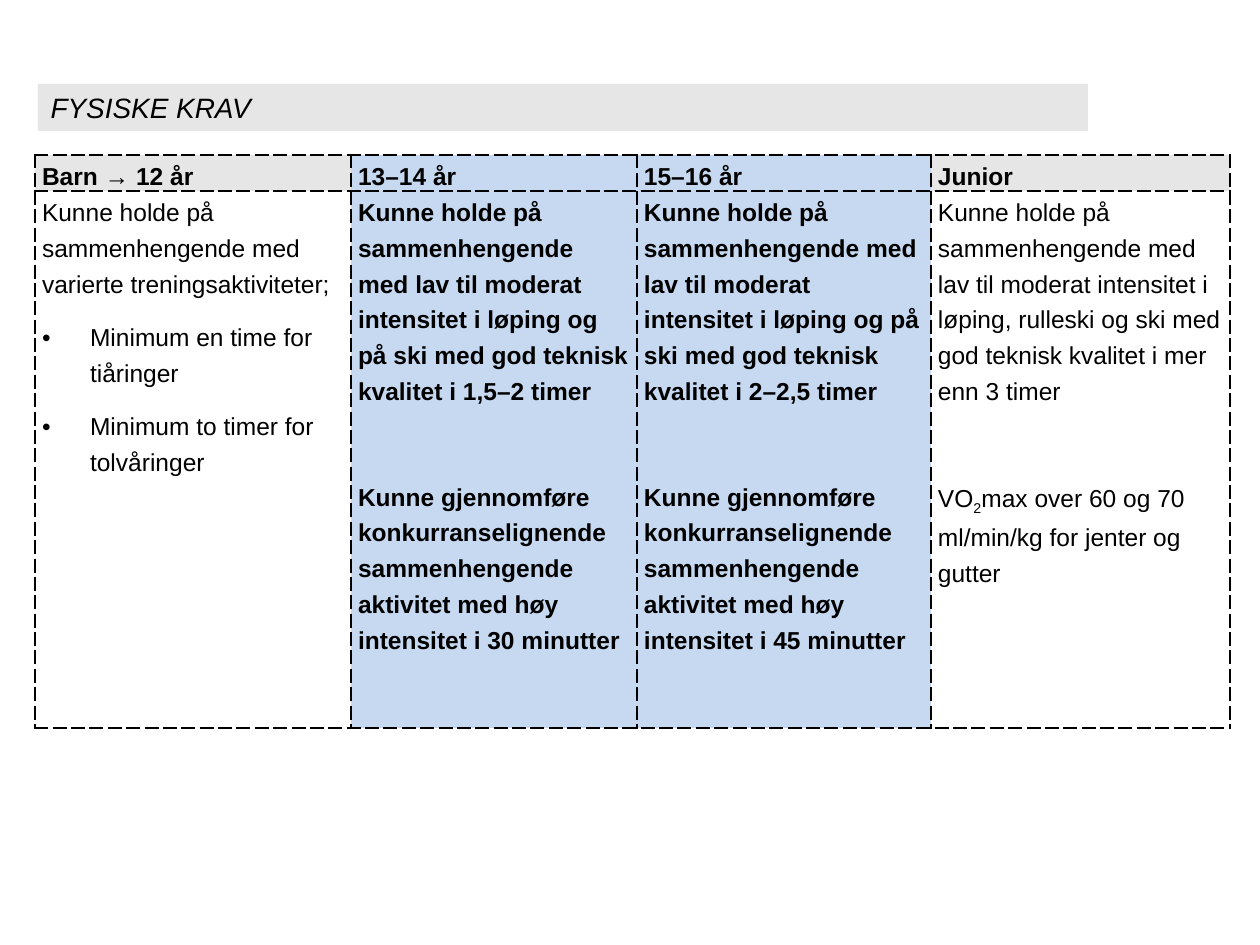
from lxml import etree
from pptx import Presentation
from pptx.dml.color import RGBColor
from pptx.enum.text import MSO_ANCHOR, MSO_AUTO_SIZE, PP_ALIGN
from pptx.oxml.ns import qn
from pptx.util import Pt

LEFT, JUST = PP_ALIGN.LEFT, PP_ALIGN.JUSTIFY
MIDDLE, FIXED = MSO_ANCHOR.MIDDLE, MSO_AUTO_SIZE.NONE
SCALE = 914400 / 126  # EMU per px
FONT = "Arial"
COLORS = {"text": "000000", "grey": "E6E6E6", "blue": "C6D9F1", "line": "000000"}

COLS = [316, 286, 294, 299]
ROWS = [36, 537]
PAD, INDENT = 7, 48
GAP, WIDE = 10, 40  # points before a paragraph

SKI = ("Kunne holde på sammenhengende med lav til moderat intensitet i løping "
       "og på ski med god teknisk kvalitet i {} timer")
RACE = ("Kunne gjennomføre konkurranselignende sammenhengende aktivitet "
        "med høy intensitet i {} minutter")


def px(n):
    return round(n * SCALE)


def rgb(name):
    return RGBColor.from_string(COLORS[name])


def add_run(para, text, size, bold=False, italic=False, base=0):
    run = para.add_run()
    run.text = text
    font = run.font
    font.name, font.size = FONT, Pt(size)
    font.bold, font.italic = bold, italic
    font.color.rgb = rgb("text")
    if base:
        run._r.get_or_add_rPr().set("baseline", str(base * 1000))


def add_bullet(para):
    props = para._p.get_or_add_pPr()
    props.set("marL", str(px(INDENT)))
    props.set("indent", str(-px(INDENT)))
    etree.SubElement(props, qn("a:buFont")).set("typeface", FONT)
    etree.SubElement(props, qn("a:buChar")).set("char", "•")


def add_border(cell):
    props = cell._tc.get_or_add_tcPr()
    for i, side in enumerate(("lnL", "lnR", "lnT", "lnB")):
        line = etree.Element(qn("a:" + side), w=str(Pt(1)))
        fill = etree.SubElement(line, qn("a:solidFill"))
        etree.SubElement(fill, qn("a:srgbClr")).set("val", COLORS["line"])
        etree.SubElement(line, qn("a:prstDash")).set("val", "dash")
        props.insert(i, line)


def fill_cell(cell, paras, bold, color=None, align=LEFT):
    """Each paragraph is (runs, space before, bullet); a run is (text, baseline)."""
    cell.margin_left = cell.margin_right = px(PAD)
    cell.margin_top = cell.margin_bottom = 0
    if color:
        cell.fill.solid()
        cell.fill.fore_color.rgb = rgb(color)
    else:
        cell.fill.background()
    add_border(cell)
    frame = cell.text_frame
    for i, (runs, space, bullet) in enumerate(paras):
        para = frame.add_paragraph() if i else frame.paragraphs[0]
        para.alignment, para.line_spacing = align, 1.3
        para.space_before = Pt(space)
        if bullet:
            add_bullet(para)
        for text, base in runs:
            add_run(para, text, 14, bold, base=base)


def plain(text, space=GAP, bullet=False):
    return [(text, 0)], space, bullet


def add_title(slide, x, y, w, h):
    title = slide.shapes.title
    title.left, title.top, title.width, title.height = map(px, (x, y, w, h))
    title.fill.solid()
    title.fill.fore_color.rgb = rgb("grey")
    frame = title.text_frame
    frame.auto_size, frame.word_wrap = FIXED, True
    frame.vertical_anchor = MIDDLE
    para = frame.paragraphs[0]
    para.alignment = LEFT
    add_run(para, "FYSISKE KRAV", 16, italic=True)


def add_grid(slide, x, y):
    # Age groups: heading, heading fill, body fill, bold body, body text
    groups = [
        ("Barn → 12 år", "grey", None, False, [
            plain("Kunne holde på sammenhengende med varierte treningsaktiviteter;"),
            plain("Minimum en time for tiåringer", bullet=True),
            plain("Minimum to timer for tolvåringer", bullet=True)]),
        ("13–14 år", "blue", "blue", True,
         [plain(SKI.format("1,5–2")), plain(RACE.format(30), WIDE)]),
        ("15–16 år", "blue", "blue", True,
         [plain(SKI.format("2–2,5")), plain(RACE.format(45), WIDE)]),
        ("Junior", "grey", None, False, [
            plain("Kunne holde på sammenhengende med lav til moderat intensitet i "
                  "løping, rulleski og ski med god teknisk kvalitet i mer enn 3 timer"),
            ([("VO", 0), ("2", -25),
              ("max over 60 og 70 ml/min/kg for jenter og gutter", 0)], WIDE, False)]),
    ]
    box = map(px, (x, y, sum(COLS), sum(ROWS)))
    table = slide.shapes.add_table(len(ROWS), len(COLS), *box).table
    table.first_row = table.horz_banding = False
    for row, size in zip(table.rows, ROWS):
        row.height = px(size)
    for i, (head, top, color, bold, body) in enumerate(groups):
        table.columns[i].width = px(COLS[i])
        fill_cell(table.cell(0, i), [plain(head)], True, top, JUST)
        fill_cell(table.cell(1, i), body, bold, color)


def main():
    deck = Presentation()
    deck.slide_width, deck.slide_height = px(1260), px(945)
    slide = deck.slides.add_slide(deck.slide_layouts[5])
    add_title(slide, 38, 84, 1050, 47)
    add_grid(slide, 35, 155)
    deck.save("out.pptx")


if __name__ == "__main__":
    main()
